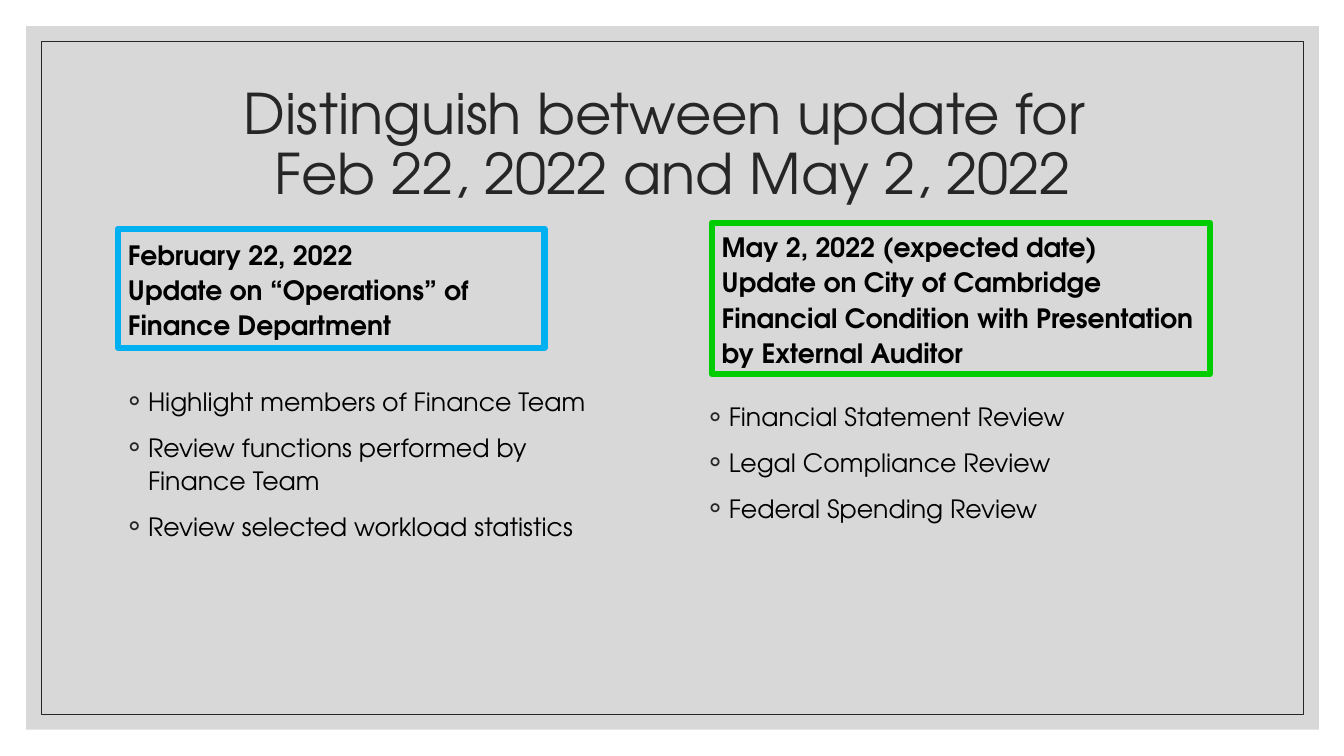
"""Build the slide that tells the two finance updates apart."""
from dataclasses import dataclass

import pptx
import pptx.dml.color
import pptx.enum.shapes
import pptx.enum.text
import pptx.oxml
import pptx.oxml.ns
import pptx.util
from pptx.util import Inches

ALIGN = pptx.enum.text.PP_ALIGN
ANCHOR = pptx.enum.text.MSO_ANCHOR


@dataclass(frozen=True)
class Theme:
    """Hold the font, colours and type sizes."""
    font: str = "TeX Gyre Adventor"
    panel: str = "BFBFBF"
    dark: str = "262626"
    black: str = "000000"
    blue: str = "00B0F0"
    green: str = "00CC00"
    title: int = 40
    head: int = 19
    item: int = 18


THEME = Theme()


def color(code):
    """Turn a hex code into a colour."""
    return pptx.dml.color.RGBColor.from_string(code)


def node(tag, **attrs):
    """Make a drawing element with attributes."""
    item = pptx.oxml.parse_xml(f"<a:{tag} {pptx.oxml.ns.nsdecls('a')}/>")
    for name, value in attrs.items():
        item.set(name, value)
    return item


def write(para, text, size, tint, bold=False):
    """Add one styled run."""
    run = para.add_run()
    run.text = text
    run.font.name = THEME.font
    run.font.size = pptx.util.Pt(size)
    run.font.bold = bold
    run.font.color.rgb = color(tint)


def paras(frame, lines):
    """Yield a left-set paragraph for each line."""
    frame.word_wrap = True
    for spot, line in enumerate(lines):
        para = frame.add_paragraph() if spot else frame.paragraphs[0]
        para.alignment = ALIGN.LEFT
        para.line_spacing = 1.1
        yield para, line


def add_rect(slide, place, fill=None, line=None, width=0):
    """Add a plain rectangle."""
    kind = pptx.enum.shapes.MSO_SHAPE.RECTANGLE
    rect = slide.shapes.add_shape(kind, *map(Inches, place))
    rect.shadow.inherit = False
    if fill:
        rect.fill.solid()
        rect.fill.fore_color.rgb = color(fill)
    else:
        rect.fill.background()
    if line:
        rect.line.color.rgb = color(line)
        rect.line.width = pptx.util.Pt(width)
    else:
        rect.line.fill.background()
    return rect


def add_panel(slide):
    """Add the grey panel and its thin frame."""
    panel = add_rect(slide, (0.26, 0.26, 12.82, 6.98), fill=THEME.panel)
    tint = panel.element.find(".//" + pptx.oxml.ns.qn("a:srgbClr"))
    tint.append(node("alpha", val="60000"))
    add_rect(slide, (0.41, 0.41, 12.52, 6.68), line=THEME.dark, width=0.5)


def set_title(slide, lines):
    """Place the title in front of the panel and fill it."""
    title = slide.shapes.title
    title.element.getparent().append(title.element)
    title.left, title.top, title.width, title.height = map(
        Inches, (1.17, 0.7, 11, 1.5))
    frame = title.text_frame
    frame.word_wrap = True
    frame.vertical_anchor = ANCHOR.MIDDLE
    para = frame.paragraphs[0]
    para.alignment = ALIGN.CENTER
    para.line_spacing = 0.9
    for spot, line in enumerate(lines):
        if spot:
            para.add_line_break()
        write(para, line, THEME.title, THEME.dark)


def add_head(slide, place, edge, lines):
    """Add an outlined heading box."""
    box = add_rect(slide, place, line=edge, width=4.5)
    box.text_frame.vertical_anchor = ANCHOR.MIDDLE
    for para, line in paras(box.text_frame, lines):
        write(para, line, THEME.head, THEME.black, True)


def add_list(slide, place, lines):
    """Add a bulleted list."""
    box = slide.shapes.add_textbox(*map(Inches, place))
    for para, line in paras(box.text_frame, lines):
        para.space_before = pptx.util.Pt(9)
        write(para, line, THEME.item, THEME.black)
        props = para._p.get_or_add_pPr()
        props.set("marL", str(Inches(0.2)))
        props.set("indent", str(Inches(-0.2)))
        tint = node("buClr")
        tint.append(node("srgbClr", val=THEME.dark))
        props.append(tint)
        props.append(node("buFont", typeface=THEME.font))
        props.append(node("buChar", char="◦"))


def main():
    """Build and save the slide."""
    deck = pptx.Presentation()
    deck.slide_width, deck.slide_height = Inches(13.33), Inches(7.5)
    slide = deck.slides.add_slide(deck.slide_layouts.get_by_name("Title Only"))
    add_panel(slide)
    set_title(slide, ("Distinguish between update for ",
                      "Feb 22, 2022 and May 2, 2022"))
    add_head(slide, (1.17, 2.27, 4.23, 1.18), THEME.blue, (
        "February 22, 2022",
        "Update on “Operations” of Finance Department"))
    add_list(slide, (1.17, 3.75, 5.1, 2.76), (
        "Highlight members of Finance Team",
        "Review functions performed by Finance Team",
        "Review selected workload statistics"))
    add_head(slide, (7.06, 2.21, 4.94, 1.5), THEME.green, (
        "May 2, 2022 (expected date)",
        "Update on City of Cambridge Financial Condition "
        "with Presentation by External Auditor"))
    add_list(slide, (6.93, 3.9, 5.23, 1.5), (
        "Financial Statement Review",
        "Legal Compliance Review",
        "Federal Spending Review"))
    deck.save("out.pptx")


if __name__ == "__main__":
    main()
